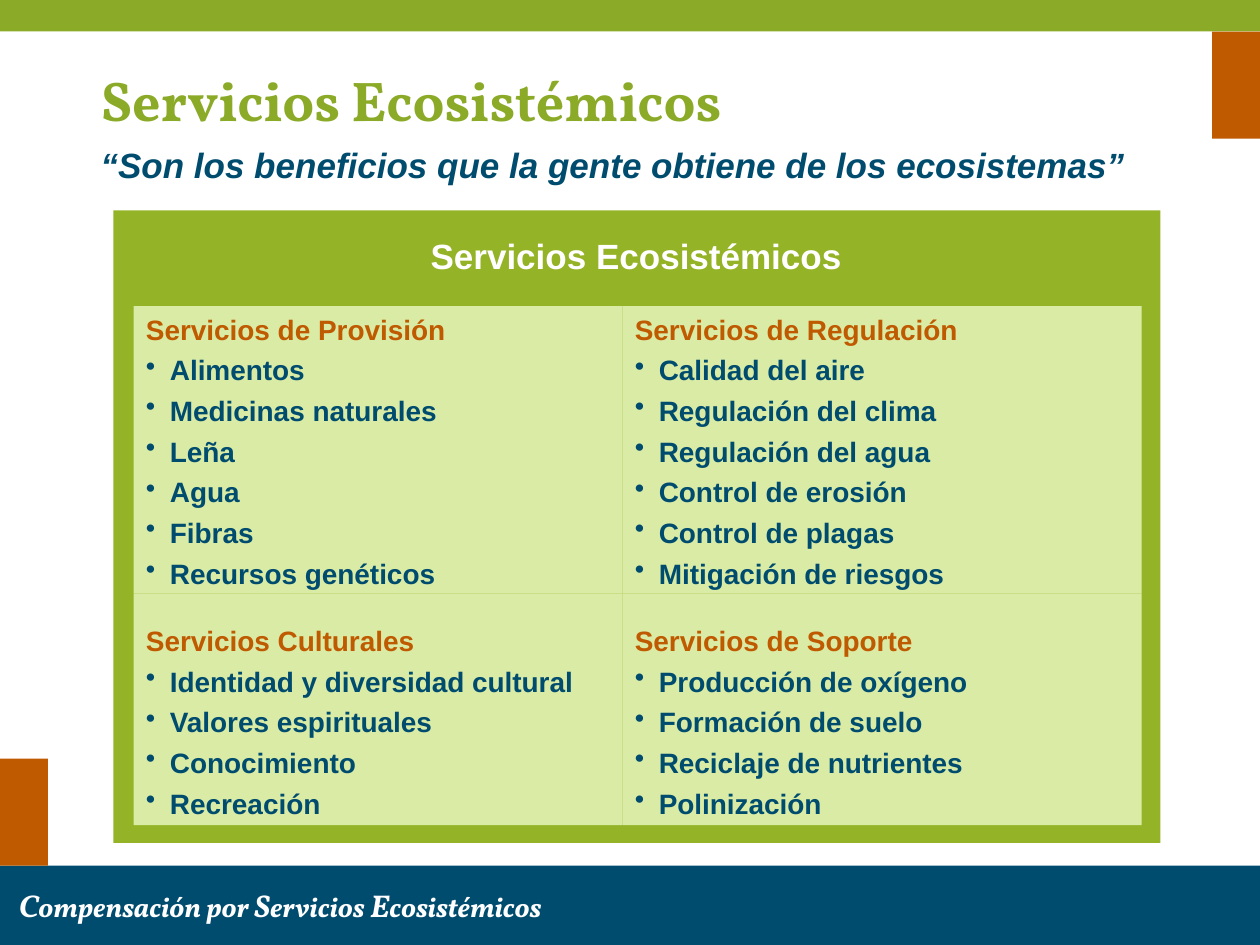
"""Build the slide on ecosystem services and their four categories."""
import lxml.etree
import pptx
import pptx.dml.color
import pptx.enum.shapes
import pptx.enum.text
import pptx.oxml.ns
import pptx.util

Inches = pptx.util.Inches
Pt = pptx.util.Pt
RGBColor = pptx.dml.color.RGBColor
Align = pptx.enum.text.PP_ALIGN
Anchor = pptx.enum.text.MSO_ANCHOR

WHITE = RGBColor(0xFF, 0xFF, 0xFF)
BLUE = RGBColor(0x00, 0x4C, 0x6F)
GREEN = RGBColor(0x8B, 0xAA, 0x27)
PANEL_GREEN = RGBColor(0x95, 0xB3, 0x27)
PALE_GREEN = RGBColor(0xDA, 0xEB, 0xA5)
ORANGE = RGBColor(0xBF, 0x5A, 0x00)

COLUMNS = [(1.06, 3.88), (4.94, 4.12)]
ROWS = [(2.43, 2.28, 0.05), (4.71, 1.84, 0.24)]
CATEGORIES = [
    [
        ("Servicios de Provisión",
         ["Alimentos", "Medicinas naturales", "Leña", "Agua", "Fibras",
          "Recursos genéticos"]),
        ("Servicios de Regulación",
         ["Calidad del aire", "Regulación del clima", "Regulación del agua",
          "Control de erosión", "Control de plagas", "Mitigación de riesgos"]),
    ],
    [
        ("Servicios Culturales",
         ["Identidad y diversidad cultural", "Valores espirituales",
          "Conocimiento", "Recreación"]),
        ("Servicios de Soporte",
         ["Producción de oxígeno", "Formación de suelo",
          "Reciclaje de nutrientes", "Polinización"]),
    ],
]


def add_rectangle(shapes, left, top, width, height, color):
    """Add a plain filled rectangle."""
    shape = shapes.add_shape(
        pptx.enum.shapes.MSO_SHAPE.RECTANGLE,
        Inches(left), Inches(top), Inches(width), Inches(height))
    shape.shadow.inherit = False
    shape.fill.solid()
    shape.fill.fore_color.rgb = color
    shape.line.fill.background()
    return shape


def add_run(paragraph, text, size, color, font="Arial", italic=False):
    """Add a bold run to a paragraph."""
    run = paragraph.add_run()
    run.text = text
    run.font.name = font
    run.font.size = Pt(size)
    run.font.bold = True
    run.font.italic = italic
    run.font.color.rgb = color


def add_label(shapes, left, top, width, text, color, alignment, italic=False):
    """Add a single-line text box."""
    box = shapes.add_textbox(
        Inches(left), Inches(top), Inches(width), Inches(0.43))
    box.text_frame.word_wrap = True
    paragraph = box.text_frame.paragraphs[0]
    paragraph.alignment = alignment
    add_run(paragraph, text, 20, color, italic=italic)


def set_bullet(paragraph):
    """Give a paragraph a hanging round bullet."""
    properties = paragraph._p.get_or_add_pPr()
    properties.set("marL", str(Inches(0.19)))
    properties.set("indent", str(-Inches(0.19)))
    bullet = lxml.etree.SubElement(properties, pptx.oxml.ns.qn("a:buChar"))
    bullet.set("char", "•")


def add_category(shapes, column, row, heading, items):
    """Add one category block with its heading and bulleted items."""
    left, width = column
    top, height, margin_top = row
    shape = add_rectangle(shapes, left, top, width, height, PALE_GREEN)
    frame = shape.text_frame
    frame.word_wrap = True
    frame.vertical_anchor = Anchor.TOP
    frame.margin_top = Inches(margin_top)
    paragraph = frame.paragraphs[0]
    paragraph.alignment = Align.LEFT
    paragraph.space_after = Pt(2)
    add_run(paragraph, heading, 16, ORANGE)
    for item in items:
        paragraph = frame.add_paragraph()
        set_bullet(paragraph)
        paragraph.alignment = Align.LEFT
        paragraph.space_before = paragraph.space_after = Pt(2)
        add_run(paragraph, item, 16, BLUE)


def add_footer(shapes):
    """Add the bottom band with its enlarged initials."""
    band = add_rectangle(shapes, 0, 6.87, 10, 0.63, BLUE)
    frame = band.text_frame
    frame.word_wrap = True
    frame.vertical_anchor = Anchor.MIDDLE
    frame.margin_left = Inches(0.15)
    paragraph = frame.paragraphs[0]
    paragraph.alignment = Align.LEFT
    for initial, rest in [("C", "ompensación por "), ("S", "ervicios "),
                          ("E", "cosistémicos")]:
        add_run(paragraph, initial, 18, WHITE, "Vollkorn", True)
        add_run(paragraph, rest, 16, WHITE, "Vollkorn", True)


def set_title(title, text):
    """Place and fill the title placeholder."""
    title.left, title.top = Inches(0.7), Inches(0.45)
    title.width, title.height = Inches(6.48), Inches(0.65)
    frame = title.text_frame
    frame.auto_size = pptx.enum.text.MSO_AUTO_SIZE.NONE
    frame.word_wrap = True
    frame.vertical_anchor = Anchor.BOTTOM
    frame.paragraphs[0].alignment = Align.LEFT
    add_run(frame.paragraphs[0], text, 32, GREEN, "Vollkorn")


def main():
    """Build and save the presentation."""
    presentation = pptx.Presentation()
    presentation.slide_width = Inches(10)
    presentation.slide_height = Inches(7.5)
    slide = presentation.slides.add_slide(presentation.slide_layouts[5])
    shapes = slide.shapes

    add_footer(shapes)
    add_rectangle(shapes, 0, 0, 10, 0.25, GREEN)
    add_rectangle(shapes, 9.62, 0.25, 0.38, 0.85, ORANGE)
    add_rectangle(shapes, 0, 6.02, 0.38, 0.85, ORANGE)

    panel = shapes.add_group_shape()
    add_rectangle(panel.shapes, 0.9, 1.67, 8.31, 5.02, PANEL_GREEN)
    add_label(panel.shapes, 1.03, 1.81, 8.04, "Servicios Ecosistémicos",
              WHITE, Align.CENTER)
    for row, categories in zip(ROWS, CATEGORIES):
        for column, (heading, items) in zip(COLUMNS, categories):
            add_category(shapes, column, row, heading, items)

    set_title(shapes.title, "Servicios Ecosistémicos")
    add_label(shapes, 0.7, 1.09, 8.94,
              "“Son los beneficios que la gente obtiene de los ecosistemas”",
              BLUE, Align.LEFT, italic=True)
    presentation.save("out.pptx")


if __name__ == "__main__":
    main()
